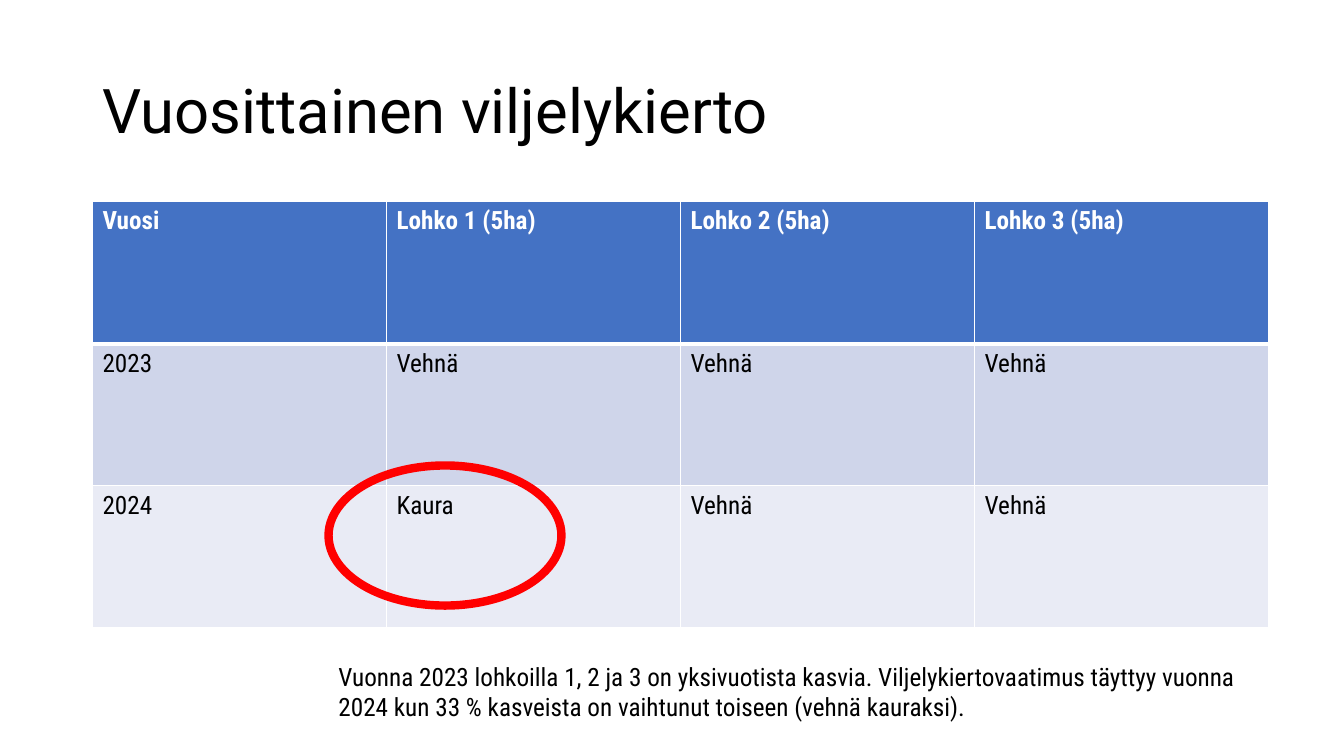
from dataclasses import dataclass

from lxml import etree
from pptx import Presentation
from pptx.dml.color import RGBColor
from pptx.enum.shapes import MSO_SHAPE
from pptx.enum.text import MSO_ANCHOR, MSO_AUTO_SIZE
from pptx.oxml.ns import qn
from pptx.slide import Slide
from pptx.table import _Cell
from pptx.text.text import _Paragraph
from pptx.util import Cm, Pt

ELLIPSE = MSO_SHAPE.OVAL
TOP, MIDDLE = MSO_ANCHOR.TOP, MSO_ANCHOR.MIDDLE
GROW = MSO_AUTO_SIZE.SHAPE_TO_FIT_TEXT
BLANK_LAYOUT = 6


@dataclass(frozen=True)
class Theme:
    title_font: str = "Roboto"
    body_font: str = "Roboto Condensed"
    title_size: int = 44
    body_size: int = 18
    text: str = "000000"
    white: str = "FFFFFF"
    header: str = "4472C4"
    highlight: str = "FF0000"
    highlight_width: int = 6
    border_width: int = 1
    header_rule_width: int = 3


@dataclass(frozen=True)
class Box:
    """Left, top, width and height in centimetres."""

    left: float
    top: float
    width: float
    height: float

    def lengths(self) -> tuple[Cm, Cm, Cm, Cm]:
        return Cm(self.left), Cm(self.top), Cm(self.width), Cm(self.height)


@dataclass(frozen=True)
class RotationRow:
    texts: tuple[str, ...]
    fill: str
    color: str
    bold: bool
    top_rule: int
    bottom_rule: int


THEME = Theme()
LEFT = 2.33
NOTE_LEFT = 8.28
TITLE_BOX = Box(LEFT, 1.02, 29.21, 3.68)
TABLE_BOX = Box(LEFT, 5.08, 29.64, 10.74)
NOTE_BOX = Box(NOTE_LEFT, 16.54, 23.7, 1.8)
CHANGE_BOX = Box(NOTE_LEFT, 11.73, 5.87, 3.53)

TITLE = "Vuosittainen viljelykierto"
NOTE = (
    "Vuonna 2023 lohkoilla 1, 2 ja 3 on yksivuotista kasvia. "
    "Viljelykiertovaatimus täyttyy vuonna 2024 kun 33 % kasveista "
    "on vaihtunut toiseen (vehnä kauraksi)."
)
ROTATION = (
    RotationRow(("Vuosi", "Lohko 1 (5ha)", "Lohko 2 (5ha)", "Lohko 3 (5ha)"),
                THEME.header, THEME.white, True,
                THEME.border_width, THEME.header_rule_width),
    RotationRow(("2023", "Vehnä", "Vehnä", "Vehnä"),
                "CFD5EA", THEME.text, False,
                THEME.header_rule_width, THEME.border_width),
    RotationRow(("2024", "Kaura", "Vehnä", "Vehnä"),
                "E9EBF5", THEME.text, False,
                THEME.border_width, THEME.border_width),
)


def style_paragraph(paragraph: _Paragraph, font_name: str, size: int,
                    color: str, bold: bool = False) -> None:
    font = paragraph.font
    font.name = font_name
    font.size = Pt(size)
    font.bold = bold
    font.color.rgb = RGBColor.from_string(color)


def add_text(slide: Slide, box: Box, text: str, font_name: str,
             size: int, anchor: MSO_ANCHOR = TOP) -> _Paragraph:
    text_box = slide.shapes.add_textbox(*box.lengths())
    frame = text_box.text_frame
    frame.word_wrap = True
    frame.vertical_anchor = anchor
    if anchor == TOP:
        frame.auto_size = GROW
    paragraph = frame.paragraphs[0]
    paragraph.text = text
    style_paragraph(paragraph, font_name, size, THEME.text)
    return paragraph


def set_borders(cell: _Cell, row: RotationRow) -> None:
    """Add the border lines; call before setting the fill, which must follow them."""
    properties = cell._tc.get_or_add_tcPr()
    widths = {"a:lnL": THEME.border_width, "a:lnR": THEME.border_width,
              "a:lnT": row.top_rule, "a:lnB": row.bottom_rule}
    for tag, width in widths.items():
        line = etree.SubElement(properties, qn(tag), w=str(Pt(width)))
        fill = etree.SubElement(line, qn("a:solidFill"))
        etree.SubElement(fill, qn("a:srgbClr"), val=THEME.white)


def add_rotation_table(slide: Slide, box: Box, rows: tuple[RotationRow, ...]) -> None:
    table = slide.shapes.add_table(len(rows), len(rows[0].texts), *box.lengths()).table
    for row_index, row in enumerate(rows):
        for column_index, text in enumerate(row.texts):
            cell = table.cell(row_index, column_index)
            set_borders(cell, row)
            cell.fill.solid()
            cell.fill.fore_color.rgb = RGBColor.from_string(row.fill)
            cell.text = text
            style_paragraph(cell.text_frame.paragraphs[0], THEME.body_font,
                            THEME.body_size, row.color, row.bold)


def add_highlight(slide: Slide, box: Box) -> None:
    ring = slide.shapes.add_shape(ELLIPSE, *box.lengths())
    ring.shadow.inherit = False
    ring.fill.background()
    ring.line.color.rgb = RGBColor.from_string(THEME.highlight)
    ring.line.width = Pt(THEME.highlight_width)


def main() -> None:
    presentation = Presentation()
    presentation.slide_width = Cm(33.87)
    presentation.slide_height = Cm(19.05)
    slide = presentation.slides.add_slide(presentation.slide_layouts[BLANK_LAYOUT])

    title = add_text(slide, TITLE_BOX, TITLE, THEME.title_font, THEME.title_size, MIDDLE)
    title.line_spacing = 0.9
    add_rotation_table(slide, TABLE_BOX, ROTATION)
    add_text(slide, NOTE_BOX, NOTE, THEME.body_font, THEME.body_size)
    add_highlight(slide, CHANGE_BOX)
    presentation.save("out.pptx")


if __name__ == "__main__":
    main()
